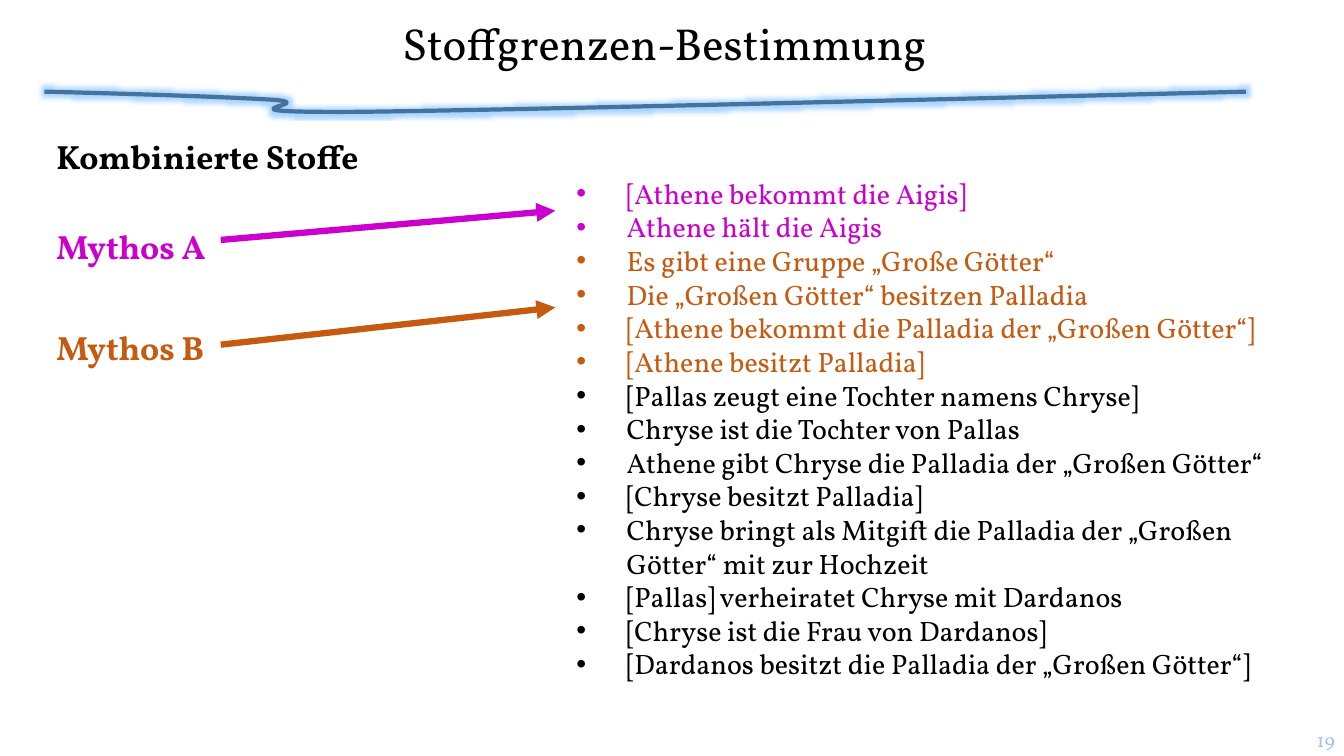
from lxml.etree import SubElement
from pptx import Presentation
from pptx.dml.color import RGBColor
from pptx.enum.shapes import MSO_CONNECTOR
from pptx.enum.text import MSO_ANCHOR, PP_ALIGN
from pptx.oxml.ns import qn
from pptx.util import Pt

COLORS = {
    "black": "000000",
    "myth_a": "CC00CC",
    "myth_b": "C55A11",
    "rule": "43739E",
    "glow": "3399FF",
    "number": "9DC3E6",
}

RULE_START = (31.7, 65.5)
RULE_CURVES = [
    ((94.3, 67), (157.7, 69.1), (195.1, 71.3)),
    ((232.6, 74.2), (140.4, 80.6), (256.3, 79.9)),
    ((372.2, 78.5), (630.7, 72), (889.9, 65.5)),
]

LABELS = [
    ("Kombinierte Stoffe", "black", 0),
    ("Mythos A", "myth_a", 38.8),
    ("Mythos B", "myth_b", 45.9),
]

STATEMENTS = {
    "myth_a": [
        "[Athene bekommt die Aigis]",
        "Athene hält die Aigis",
    ],
    "myth_b": [
        "Es gibt eine Gruppe „Große Götter“",
        "Die „Großen Götter“ besitzen Palladia",
        "[Athene bekommt die Palladia der „Großen Götter“]",
        "[Athene besitzt Palladia]",
    ],
    "black": [
        "[Pallas zeugt eine Tochter namens Chryse]",
        "Chryse ist die Tochter von Pallas",
        "Athene gibt Chryse die Palladia der „Großen Götter“",
        "[Chryse besitzt Palladia]",
        "Chryse bringt als Mitgift die Palladia der „Großen Götter“ mit zur Hochzeit",
        "[Pallas] verheiratet Chryse mit Dardanos",
        "[Chryse ist die Frau von Dardanos]",
        "[Dardanos besitzt die Palladia der „Großen Götter“]",
    ],
}


def curve_points(start, curves, steps=24):
    points = []
    for first, second, end in curves:
        for step in range(1, steps + 1):
            t = step / steps
            weights = ((1 - t) ** 3, 3 * t * (1 - t) ** 2, 3 * t**2 * (1 - t), t**3)
            corners = zip(start, first, second, end)
            points.append([sum(w * c for w, c in zip(weights, axis)) for axis in corners])
        start = end
    return points


class Page:
    """Draws the elements of one slide in a shared style."""

    font = "Vollkorn"

    def __init__(self, deck):
        self.shapes = deck.slides.add_slide(deck.slide_layouts[6]).shapes

    def text(self, frame, rows, size, bold=False, align=PP_ALIGN.LEFT,
             anchor=MSO_ANCHOR.TOP, spacing=1.0, bullet_indent=0):
        box = self.shapes.add_textbox(*map(Pt, frame)).text_frame
        box.word_wrap = True
        box.vertical_anchor = anchor
        box.text = "\n".join(words for words, _, _ in rows)
        for para, (_, color, before) in zip(box.paragraphs, rows):
            para.alignment = align
            para.line_spacing = spacing
            para.space_before = Pt(before)
            if bullet_indent:
                self.bullet(para, bullet_indent)
            for span in para.runs:
                span.font.name = self.font
                span.font.size = Pt(size)
                span.font.bold = bold
                span.font.color.rgb = RGBColor.from_string(COLORS[color])

    def bullet(self, para, indent):
        properties = para._p.get_or_add_pPr()
        properties.set("marL", str(Pt(indent)))
        properties.set("indent", str(-Pt(indent)))
        SubElement(properties, qn("a:buFont"), typeface="Arial")
        SubElement(properties, qn("a:buChar"), char="•")

    def stroke(self, line, color, width):
        line.color.rgb = RGBColor.from_string(COLORS[color])
        line.width = Pt(width)

    def glowing_curve(self, start, curves, color, width, glow, radius):
        builder = self.shapes.build_freeform(*map(Pt, start))
        points = [tuple(map(Pt, point)) for point in curve_points(start, curves)]
        builder.add_line_segments(points, close=False)
        curve = builder.convert_to_shape()
        curve.fill.background()
        self.stroke(curve.line, color, width)
        curve.shadow.inherit = False
        effects = curve._element.spPr.find(qn("a:effectLst"))
        halo = SubElement(effects, qn("a:glow"), rad=str(Pt(radius)))
        tint = SubElement(halo, qn("a:srgbClr"), val=COLORS[glow])
        SubElement(tint, qn("a:alpha"), val="40000")

    def arrow(self, start, end, color, width):
        arrow = self.shapes.add_connector(MSO_CONNECTOR.STRAIGHT, *map(Pt, start + end))
        self.stroke(arrow.line, color, width)
        SubElement(arrow.line._get_or_add_ln(), qn("a:tailEnd"), type="triangle")
        SubElement(arrow._element.spPr, qn("a:effectLst"))


def main():
    deck = Presentation()
    deck.slide_width, deck.slide_height = Pt(960), Pt(540)
    page = Page(deck)
    page.glowing_curve(RULE_START, RULE_CURVES, "rule", 3, "glow", 5)
    page.text((33.1, 0, 883.4, 65.5), [("Stoffgrenzen-Bestimmung", "black", 0)], 32,
              align=PP_ALIGN.CENTER, anchor=MSO_ANCHOR.MIDDLE, spacing=0.9)
    page.text((33.1, 96.5, 383, 432), LABELS, 24, bold=True, spacing=0.9)
    page.text((907.9, 517.7, 52.6, 20.9), [("19", "number", 0)], 14,
              align=PP_ALIGN.RIGHT, anchor=MSO_ANCHOR.MIDDLE)
    rows = [(words, color, 0) for color, group in STATEMENTS.items() for words in group]
    page.text((404.6, 122.4, 543.6, 370.8), rows, 20, bullet_indent=36)
    page.arrow((157.7, 246.2), (396.7, 219.6), "myth_b", 4.5)
    page.arrow((157.7, 171.4), (396.7, 150.5), "myth_a", 4.5)
    deck.save("out.pptx")


if __name__ == "__main__":
    main()
